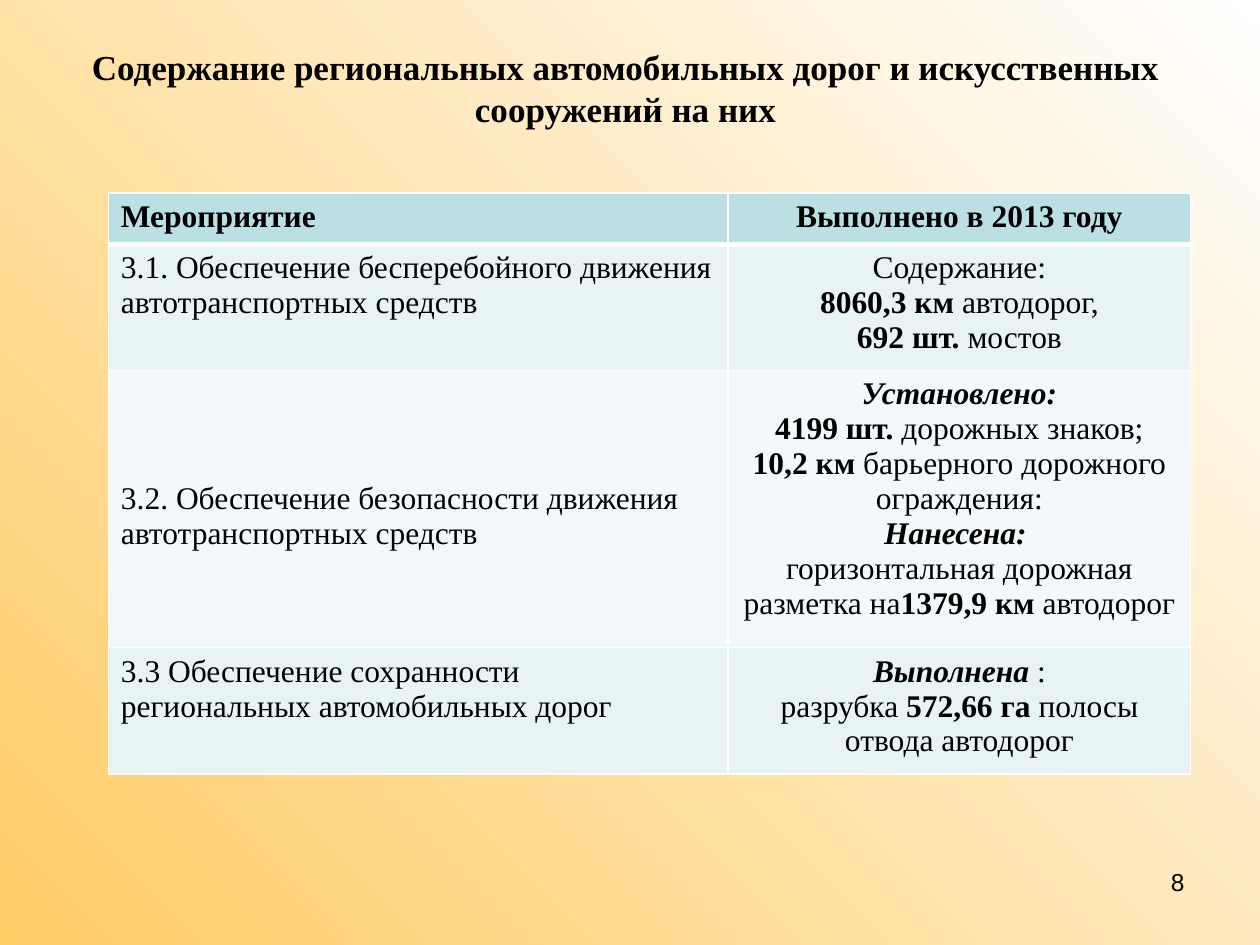
from lxml.etree import SubElement
from pptx import Presentation
from pptx.dml.color import RGBColor
from pptx.enum.text import PP_ALIGN
from pptx.oxml.ns import qn
from pptx.util import Inches, Pt

SERIF = "Times New Roman"
COLS = [4.92, 3.67]
ROWS = [
    (0.41, "BBE0E3", [[("Мероприятие", "b")]],
     [[("Выполнено в 2013 году", "b")]]),
    (1.0, "E7F3F4",
     [[("3.1. Обеспечение бесперебойного движения автотранспортных средств", "")]],
     [[("Содержание:", "")],
      [("8060,3 км ", "b"), ("автодорог,", "")],
      [("692 шт. ", "b"), ("мостов", "")]]),
    (2.2, "F3F9FA",
     [[("3.2. Обеспечение безопасности движения автотранспортных средств", "")]],
     [[("Установлено:", "bi")],
      [("4199 шт. ", "b"), ("дорожных знаков;", "")],
      [("10,2 км ", "b"), ("барьерного дорожного ограждения:", "")],
      [("Нанесена: ", "bi")],
      [("горизонтальная дорожная разметка на", ""), ("1379,9 км ", "b"),
       ("автодорог", "")]]),
    (1.0, "E7F3F4",
     [[("3.3 Обеспечение сохранности региональных автомобильных дорог", "")]],
     [[("Выполнена", "bi"), (" :", "")],
      [("разрубка ", ""), ("572,66 га ", "b"), ("полосы отвода автодорог", "")]]),
]
TOP_MARGINS = {(2, 0): 0.88}


def rgb(value):
    """Turn a hex string into a colour."""
    return RGBColor.from_string(value)


def write(tf, paragraphs, size, align, font=SERIF, **formats):
    """Fill a text frame with paragraphs of (text, style) runs."""
    for i, runs in enumerate(paragraphs):
        p = tf.paragraphs[0] if i == 0 else tf.add_paragraph()
        for name, value in {"alignment": align, **formats}.items():
            setattr(p, name, value)
        for text, style in runs:
            r = p.add_run()
            r.text = text
            r.font.color.rgb = rgb("000000")
            look = {"name": font, "size": Pt(size),
                    "bold": "b" in style, "italic": "i" in style}
            for name, value in look.items():
                setattr(r.font, name, value)


def add_text(s, box, text, style, size, align, **formats):
    """Place a wrapped text box."""
    tf = s.shapes.add_textbox(*map(Inches, box)).text_frame
    tf.word_wrap = True
    write(tf, [[(text, style)]], size, align, **formats)


def add_borders(cell, widths):
    """Draw white cell borders, with widths in points by side."""
    tcPr = cell._tc.get_or_add_tcPr()
    for i, (side, width) in enumerate(widths.items()):
        ln = SubElement(tcPr, qn(f"a:ln{side}"), w=str(Pt(width)))
        fill = SubElement(ln, qn("a:solidFill"))
        SubElement(fill, qn("a:srgbClr"), val="FFFFFF")
        tcPr.insert(i, ln)


def add_works_table(s, box):
    """Place the table of works and results."""
    shape = s.shapes.add_table(len(ROWS), len(COLS), *map(Inches, box))
    table = shape.table
    for column, width in zip(table.columns, COLS):
        column.width = Inches(width)
    for i, (height, color, *texts) in enumerate(ROWS):
        table.rows[i].height = Inches(height)
        for j, (paragraphs, align) in enumerate(zip(texts, (PP_ALIGN.LEFT, PP_ALIGN.CENTER))):
            cell = table.cell(i, j)
            cell.margin_top = Inches(TOP_MARGINS.get((i, j), 0.05))
            cell.fill.solid()
            cell.fill.fore_color.rgb = rgb(color)
            write(cell.text_frame, paragraphs, 18, align)
            add_borders(cell, {"L": 1, "R": 1, "T": 3 if i == 1 else 1,
                               "B": 3 if i == 0 else 1})


def set_background(s):
    """Shade the slide from the lower left to the upper right."""
    fill = s.background.fill
    fill.gradient()
    fill.gradient_angle = 45
    for stop, color, position in zip(fill.gradient_stops, ("FFCC66", "FFFFFF"), (0, 1)):
        stop.color.rgb = rgb(color)
        stop.position = position


def main():
    """Build and save the slide."""
    prs = Presentation()
    prs.slide_width, prs.slide_height = Inches(10), Inches(7.5)
    s = prs.slides.add_slide(prs.slide_layouts[6])
    set_background(s)
    add_text(s, (0.55, 0.31, 8.83, 0.77),
             "Содержание региональных автомобильных дорог и искусственных "
             "сооружений на них", "b", 20, PP_ALIGN.CENTER, line_spacing=Pt(24))
    add_works_table(s, (0.86, 1.53, sum(COLS), sum(row[0] for row in ROWS)))
    add_text(s, (7.17, 6.83, 2.33, 0.52), "8", "", 14, PP_ALIGN.RIGHT, font="Arial")
    prs.save("out.pptx")


if __name__ == "__main__":
    main()
